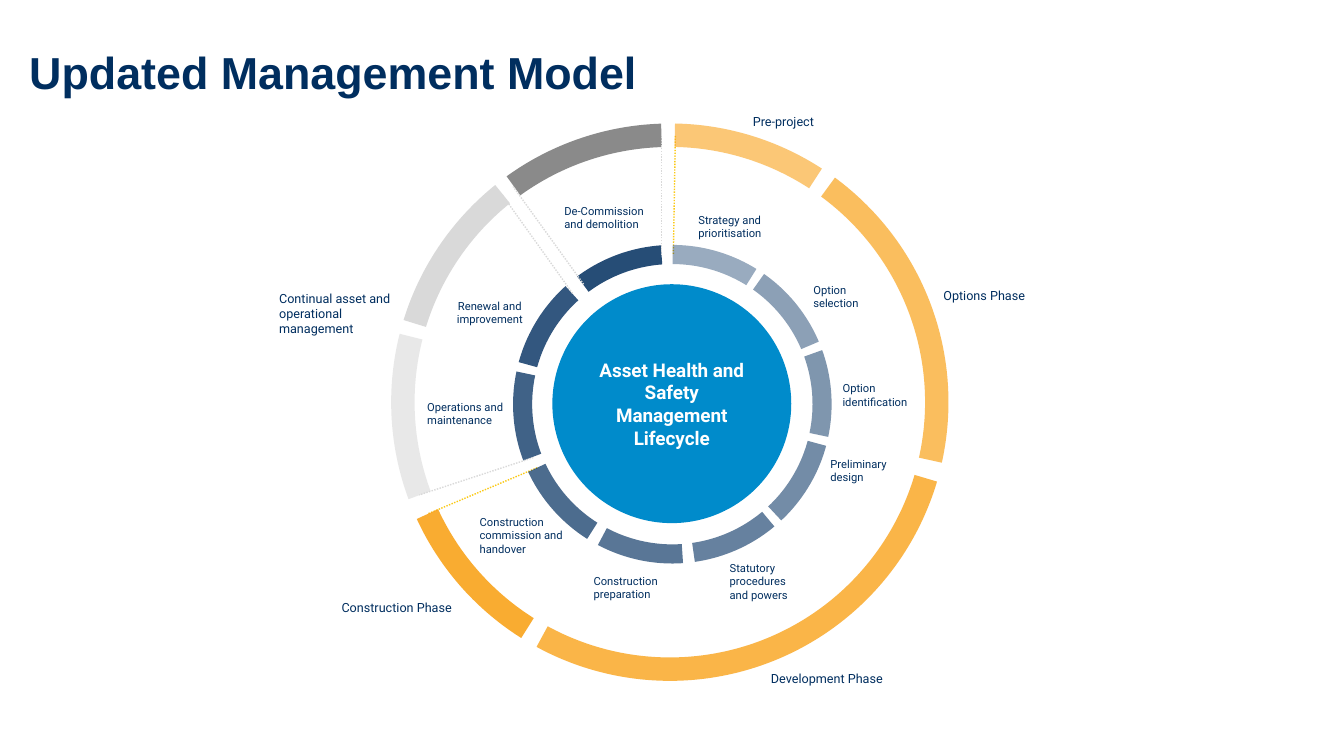
import lxml.etree
import pptx
import pptx.dml.color
import pptx.enum.dml
import pptx.enum.shapes
import pptx.enum.text
import pptx.oxml.ns
import pptx.util

ALIGN = pptx.enum.text.PP_ALIGN
ANCHOR = pptx.enum.text.MSO_ANCHOR
AUTO_SIZE = pptx.enum.text.MSO_AUTO_SIZE
SHAPE = pptx.enum.shapes.MSO_SHAPE
qn = pptx.oxml.ns.qn

COLORS = {
    "navy": "002E5F",
    "blue": "008BCB",
    "orange": "F9A31B",
    "yellow": "FBC914",
    "light grey": "D9D9D9",
    "dark grey": "595959",
    "white": "FFFFFF",
}
SLIDE_COLUMNS, SLIDE_ROWS = 133.33, 75

STAGE_ROTATIONS = [5, 40, 75, 110, 145, 181, 218, 255, 291, 329]
STAGE_START, LATE_STAGE_START, STAGE_END = 159.1, 158.6, 178.13

PHASES = [
    (164, 19.89, 40.32, "light grey", 100),
    (336, 177.05, 196.25, "orange", 60),
    (15, 174.81, 214.53, "orange", 70),
    (83, 176.14, 21.35, "orange", 80),
    (86, 21.73, 41.53, "orange", 90),
    (127, 19.58, 40.32, "light grey", 60),
    (201, 19.89, 40.32, "dark grey", 70),
]
PROJECT_BORDERS = [
    ((66.8, 25.2), (67, 13.4)),
    ((53.3, 46.4), (42.4, 51)),
]
OPERATION_BORDERS = [
    ((52.9, 45.4), (41.6, 49.1)),
    ((56.8, 29.1), (49.8, 19.3)),
    ((57.9, 28.2), (50.9, 18.5)),
    ((65.6, 25.3), (65.6, 13.5)),
]
STAGE_LABELS = [
    ("Strategy and prioritisation", 68.3, 20.6, 9.2, 3.8),
    ("Option selection", 79.7, 27.5, 7.5, 3.8),
    ("Option identification", 82.6, 37.3, 9.2, 3.8),
    ("Preliminary design", 81.4, 44.8, 8.7, 3.8),
    ("Statutory procedures and powers", 71.4, 55.1, 9, 5.1),
    ("Construction preparation", 57.9, 56.4, 10.4, 3.8),
    ("Construction commission and handover", 46.6, 50.6, 12.1, 5),
    ("Operations and maintenance", 41.4, 39.2, 9.7, 3.7),
    ("De-Commission and demolition", 55, 19.7, 11.2, 3.8),
]
PHASE_LABELS = [
    ("Pre-project", 73.7, 10.8, 9.6, 2.5),
    ("Options Phase", 92.6, 28.1, 14.1, 2.5),
    ("Development Phase", 75.5, 66.1, 16.6, 2.5),
    ("Construction Phase", 32.9, 59, 16.6, 2.5),
    ("Continual asset and operational management", 26.7, 28.3, 14.2, 5.6),
]


def rgb(color):
    return pptx.dml.color.RGBColor.from_string(COLORS[color])


def write(frame, text, font="Roboto", size=8, color="navy", bold=False,
          align=ALIGN.LEFT, spacing=1.0, auto_size=AUTO_SIZE.NONE):
    frame.word_wrap = True
    frame.auto_size = auto_size
    frame.vertical_anchor = ANCHOR.MIDDLE
    frame.text = text
    paragraph = frame.paragraphs[0]
    paragraph.alignment = align
    paragraph.line_spacing = spacing
    letters = paragraph.runs[0].font
    letters.name = font
    letters.size = pptx.util.Pt(size)
    letters.bold = bold
    letters.color.rgb = rgb(color)


class Canvas:
    def __init__(self, deck):
        self.unit = deck.slide_width / SLIDE_COLUMNS
        self.slide = deck.slides.add_slide(deck.slide_layouts[5])
        self.shapes = self.slide.shapes

    def cells(self, *counts):
        return [pptx.util.Emu(round(count * self.unit)) for count in counts]

    def title(self, text, *box):
        heading = self.shapes.title
        heading.left, heading.top, heading.width, heading.height = self.cells(*box)
        write(heading.text_frame, text, font="Arial", size=32, bold=True, spacing=0.9)

    def label(self, text, *box, **style):
        caption = self.shapes.add_textbox(*self.cells(*box))
        write(caption.text_frame, text, auto_size=AUTO_SIZE.SHAPE_TO_FIT_TEXT, **style)

    def round_shape(self, kind, center, radius, color, opacity=100):
        column, row = center
        box = self.cells(column - radius, row - radius, 2 * radius, 2 * radius)
        figure = self.shapes.add_shape(kind, *box)
        figure.shadow.inherit = False
        figure.fill.solid()
        figure.fill.fore_color.rgb = rgb(color)
        figure.line.fill.background()
        if opacity < 100:
            tint = figure._element.spPr.find(".//" + qn("a:srgbClr"))
            lxml.etree.SubElement(tint, qn("a:alpha"), val=str(opacity * 1000))
        return figure

    def disc(self, text, center, radius, color):
        hub = self.round_shape(SHAPE.OVAL, center, radius, color)
        write(hub.text_frame, text, size=13.5, color="white", bold=True, align=ALIGN.CENTER)

    def arc(self, center, radius, rotation, start, end, thickness, color, opacity):
        segment = self.round_shape(SHAPE.BLOCK_ARC, center, radius, color, opacity)
        segment.rotation = rotation
        for index, value in enumerate((start, end, thickness)):
            segment.adjustments[index] = value

    def dotted_line(self, begin, end, color):
        border = self.shapes.add_connector(
            pptx.enum.shapes.MSO_CONNECTOR.STRAIGHT, *self.cells(*begin, *end))
        border.line.color.rgb = rgb(color)
        border.line.width = pptx.util.Pt(1)
        border.line.dash_style = pptx.enum.dml.MSO_LINE.ROUND_DOT
        lxml.etree.SubElement(border._element.spPr, qn("a:effectLst"))


def main():
    deck = pptx.Presentation()
    deck.slide_width = pptx.util.Inches(SLIDE_COLUMNS / 10)
    deck.slide_height = pptx.util.Inches(SLIDE_ROWS / 10)
    canvas = Canvas(deck)
    canvas.title("Updated Management Model", 1.9, 2.3, 121.3, 10.3)

    for begin, end in PROJECT_BORDERS:
        canvas.dotted_line(begin, end, "yellow")
    canvas.disc("Asset Health and Safety Management Lifecycle", (66.65, 40.05), 11.85, "blue")
    for order, rotation in enumerate(STAGE_ROTATIONS):
        start = STAGE_START if order < 6 else LATE_STAGE_START
        canvas.arc((66.7, 40.1), 15.8, rotation, start, STAGE_END, 0.06,
                   "navy", 40 + 5 * order)
    for rotation, start, end, color, opacity in PHASES:
        canvas.arc((66.45, 39.9), 27.65, rotation, start, end, 0.042, color, opacity)
    for begin, end in OPERATION_BORDERS:
        canvas.dotted_line(begin, end, "light grey")

    for text, *box in STAGE_LABELS:
        canvas.label(text, *box)
    canvas.label("Renewal and improvement", 44.1, 29.1, 9, 3.8, align=ALIGN.CENTER)
    for text, *box in PHASE_LABELS:
        canvas.label(text, *box, size=9)
    deck.save("out.pptx")


if __name__ == "__main__":
    main()
